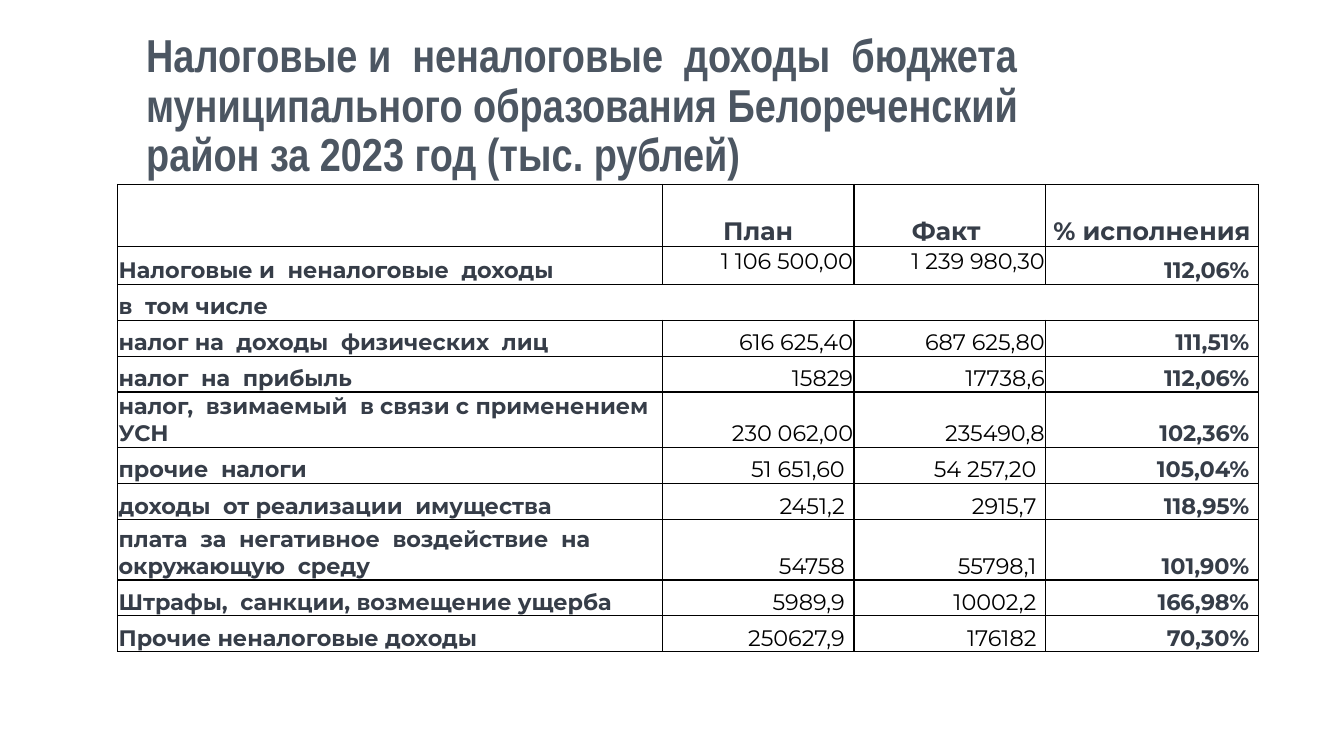
from lxml.etree import SubElement
from pptx import Presentation
from pptx.dml.color import RGBColor
from pptx.enum.text import MSO_ANCHOR, MSO_AUTO_SIZE, PP_ALIGN
from pptx.oxml.ns import qn
from pptx.util import Cm, Pt

TITLE = "Налоговые и  неналоговые  доходы  бюджета муниципального образования Белореченский  район за 2023 год (тыс. рублей)"
ROWS = [
    ("", "План", "Факт ", "% исполнения"),
    ("Налоговые и  неналоговые  доходы", "1 106 500,00", "1 239 980,30", "112,06%"),
    ("в  том числе", "", "", ""),
    ("налог на  доходы  физических  лиц", "616 625,40", "687 625,80", "111,51%"),
    ("налог  на  прибыль", "15829", "17738,6", "112,06%"),
    ("налог,  взимаемый  в связи с применением УСН", "230 062,00", "235490,8", "102,36%"),
    ("прочие  налоги", "51 651,60", "54 257,20", "105,04%"),
    ("доходы  от реализации  имущества", "2451,2", "2915,7", "118,95%"),
    ("плата  за  негативное  воздействие  на окружающую  среду", "54758", "55798,1", "101,90%"),
    ("Штрафы,  санкции, возмещение ущерба", "5989,9", "10002,2", "166,98%"),
    ("Прочие неналоговые доходы", "250627,9", "176182", "70,30%"),
]
COLUMN_WIDTHS = [13.72, 4.83, 4.83, 5.36]
ROW_HEIGHTS = [1.57, 0.94, 0.91, 0.91, 0.9, 1.02, 0.91, 0.91, 1.52, 0.9, 0.91]
TOTAL_ROW, SPAN_ROW, FIRST_INDENTED_ROW = 1, 2, 6
PERCENT_COLUMN = 3
TITLE_COLOR, LABEL_COLOR, NUMBER_COLOR = "4C5662", "363D48", "000000"


def color(value):
    return RGBColor.from_string(value)


def write(frame, text, size, font="Montserrat", fill=LABEL_COLOR, bold=True,
          align=PP_ALIGN.LEFT, spacing=1.0):
    paragraph = frame.paragraphs[0]
    paragraph.alignment = align
    paragraph.line_spacing = spacing
    run = paragraph.add_run()
    run.text = text
    run.font.name = font
    run.font.size = Pt(size)
    run.font.bold = bold
    run.font.color.rgb = color(fill)


def add_borders(cell, line_color="000000", width=Pt(1)):
    properties = cell._tc.get_or_add_tcPr()
    for side in ("a:lnL", "a:lnR", "a:lnT", "a:lnB"):
        line = SubElement(properties, qn(side), w=str(width))
        fill = SubElement(line, qn("a:solidFill"))
        SubElement(fill, qn("a:srgbClr"), val=line_color)


def format_cell(cell, text, row, column):
    is_number = row > 0 and column > 0
    is_percent = is_number and column == PERCENT_COLUMN
    is_amount = is_number and not is_percent
    indented = is_percent or (is_number and row >= FIRST_INDENTED_ROW)
    cell.margin_left = cell.margin_top = Cm(0.02)
    cell.margin_right = Cm(0.23 if indented else 0.02)
    cell.margin_bottom = Cm(0)
    top_aligned = row == TOTAL_ROW and is_amount
    cell.vertical_anchor = MSO_ANCHOR.TOP if top_aligned else MSO_ANCHOR.BOTTOM
    add_borders(cell)
    cell.fill.background()
    if text:
        align = PP_ALIGN.RIGHT if is_number else PP_ALIGN.LEFT if row else PP_ALIGN.CENTER
        write(cell.text_frame, text, 16 if row else 18, align=align, bold=not is_amount,
              fill=NUMBER_COLOR if is_amount else LABEL_COLOR)


def main():
    presentation = Presentation()
    presentation.slide_width, presentation.slide_height = Cm(33.87), Cm(19.05)
    slide = presentation.slides.add_slide(presentation.slide_layouts[5])

    title = slide.shapes.title
    title.left, title.top, title.width, title.height = Cm(3.43), Cm(0.53), Cm(24.94), Cm(4.34)
    title.text_frame.word_wrap = True
    title.text_frame.auto_size = MSO_AUTO_SIZE.NONE
    title.text_frame.vertical_anchor = MSO_ANCHOR.MIDDLE
    write(title.text_frame, TITLE, 33, font="Arial Narrow", fill=TITLE_COLOR, spacing=0.9)

    table = slide.shapes.add_table(
        len(ROWS), len(COLUMN_WIDTHS), Cm(2.97), Cm(4.65),
        Cm(sum(COLUMN_WIDTHS)), Cm(sum(ROW_HEIGHTS))).table
    table.first_row = table.horz_banding = False
    for column, width in zip(table.columns, COLUMN_WIDTHS):
        column.width = Cm(width)
    for row, height in zip(table.rows, ROW_HEIGHTS):
        row.height = Cm(height)
    for row, texts in enumerate(ROWS):
        for column, text in enumerate(texts):
            format_cell(table.cell(row, column), text, row, column)
    table.cell(SPAN_ROW, 0).merge(table.cell(SPAN_ROW, PERCENT_COLUMN))

    presentation.save("out.pptx")


if __name__ == "__main__":
    main()
